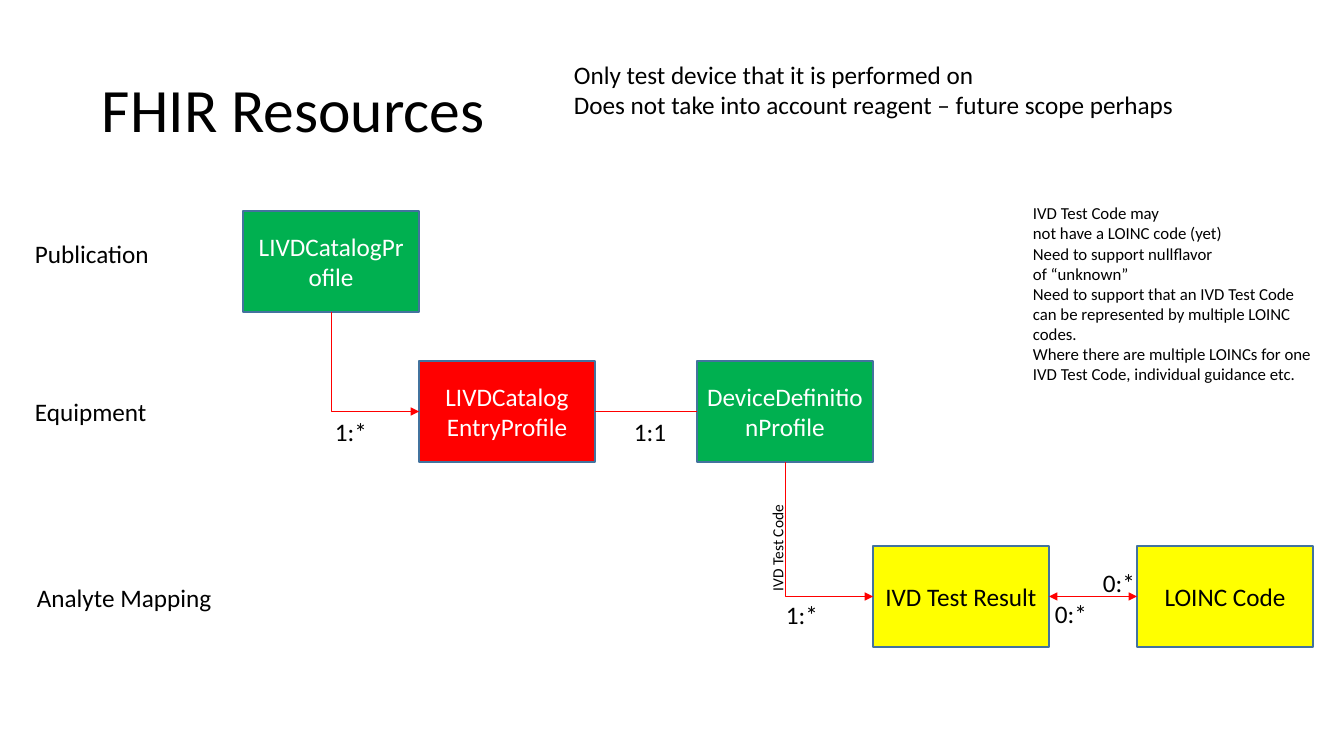
"""Build the FHIR Resources slide: resource boxes, their relations and notes."""
from lxml import etree
from pptx import Presentation
from pptx.dml.color import RGBColor
from pptx.enum.shapes import MSO_CONNECTOR, MSO_SHAPE
from pptx.enum.text import MSO_ANCHOR, MSO_AUTO_SIZE, PP_ALIGN
from pptx.oxml.ns import qn
from pptx.util import Emu, Pt

STRAIGHT, ELBOW = MSO_CONNECTOR.STRAIGHT, MSO_CONNECTOR.ELBOW
RECTANGLE = MSO_SHAPE.RECTANGLE
MIDDLE, CENTER = MSO_ANCHOR.MIDDLE, PP_ALIGN.CENTER
FIT, FIXED = MSO_AUTO_SIZE.SHAPE_TO_FIT_TEXT, MSO_AUTO_SIZE.NONE
TOP, LEFT, BOTTOM, RIGHT = range(4)
BOX_WIDTH, BOX_HEIGHT = 176, 101
COLORS = {
    "green": "00B050", "red": "FF0000", "yellow": "FFFF00",
    "outline": "43739E", "white": "FFFFFF", "black": "000000",
}


def px(*lengths):
    return [Emu(round(length * 914400 / 100.8)) for length in lengths]


def write(shape, text, size, color="black"):
    shape.text_frame.text = text
    for paragraph in shape.text_frame.paragraphs:
        paragraph.font.name = "Calibri"
        paragraph.font.size = Pt(size)
        paragraph.font.color.rgb = RGBColor.from_string(COLORS[color])


presentation = Presentation()
presentation.slide_width, presentation.slide_height = px(1344, 756)
slide = presentation.slides.add_slide(presentation.slide_layouts[6])

title = slide.shapes.add_textbox(*px(92, 40, 1159, 146))
title.text_frame.word_wrap = True
title.text_frame.auto_size = FIXED
title.text_frame.vertical_anchor = MIDDLE
write(title, "FHIR Resources", 44)
title.text_frame.paragraphs[0].line_spacing = 0.9

resources = [
    ("catalog", "LIVDCatalogProfile", 243, 211, "green", "white"),
    ("entry", "LIVDCatalog\vEntryProfile", 419, 361, "red", "white"),
    ("device", "DeviceDefinitionProfile", 697, 361, "green", "white"),
    ("result", "IVD Test Result", 873, 546, "yellow", "black"),
    ("loinc", "LOINC Code", 1137, 546, "yellow", "black"),
]
boxes = {}
for key, text, left, top, fill, color in resources:
    box = slide.shapes.add_shape(RECTANGLE, *px(left, top, BOX_WIDTH, BOX_HEIGHT))
    box.shadow.inherit = False
    box.fill.solid()
    box.fill.fore_color.rgb = RGBColor.from_string(COLORS[fill])
    box.line.color.rgb = RGBColor.from_string(COLORS["outline"])
    box.line.width = Pt(1)
    box.text_frame.vertical_anchor = MIDDLE
    write(box, text, 18, color)
    box.text_frame.paragraphs[0].alignment = CENTER
    boxes[key] = box

relations = [
    ("catalog", BOTTOM, "entry", ELBOW, ["tailEnd"]),
    ("entry", RIGHT, "device", STRAIGHT, []),
    ("device", BOTTOM, "result", ELBOW, ["tailEnd"]),
    ("result", RIGHT, "loinc", STRAIGHT, ["headEnd", "tailEnd"]),
]
for start, side, end, kind, arrowheads in relations:
    connector = slide.shapes.add_connector(kind, 0, 0, 0, 0)
    connector.begin_connect(boxes[start], side)
    connector.end_connect(boxes[end], LEFT)
    connector.line.color.rgb = RGBColor.from_string(COLORS["red"])
    connector.line.width = Pt(0.5)
    properties = connector._element.spPr
    if kind == ELBOW:
        across, down = connector.width, connector.height
        connector.left += (across - down) // 2
        connector.top += (down - across) // 2
        connector.width, connector.height = down, across
        transform = properties.find(qn("a:xfrm"))
        transform.set("rot", "16200000")
        transform.set("flipH", "1")
        properties.find(qn("a:prstGeom")).set("prst", "bentConnector2")
    for arrowhead in arrowheads:
        etree.SubElement(properties.find(qn("a:ln")), qn("a:" + arrowhead), type="triangle")
    etree.SubElement(properties, qn("a:effectLst"))

exception_note = "\n".join([
    "IVD Test Code may",
    "not have a LOINC code (yet)",
    "Need to support nullflavor",
    "of “unknown”",
    "Need to support that an IVD Test Code\vcan be represented by multiple LOINC\vcodes.",
    "Where there are multiple LOINCs for one\vIVD Test Code, individual guidance etc.",
])
scope_note = (
    "Only test device that it is performed on\n"
    "Does not take into account reagent – future scope perhaps"
)
labels = [
    ("1:*", 325, 411, 52, 40, 18, 0),
    ("1:*", 776, 594, 52, 40, 18, 0),
    ("0:*", 1093, 562, 52, 40, 18, 0),
    ("0:*", 1045, 593, 52, 40, 18, 0),
    ("1:1", 624, 411, 53, 40, 18, 0),
    ("Publication", 25, 233, 136, 40, 18, 0),
    ("Equipment", 25, 391, 133, 40, 18, 0),
    ("Analyte Mapping", 27, 577, 197, 40, 18, 0),
    (exception_note, 1023, 198, 301, 214, 12, 0),
    ("IVD Test Code", 723, 532, 109, 29, 11, 270),
    (scope_note, 564, 54, 627, 72, 18, 0),
]
for text, left, top, width, height, size, rotation in labels:
    label = slide.shapes.add_textbox(*px(left, top, width, height))
    label.rotation = rotation
    label.text_frame.word_wrap = False
    label.text_frame.auto_size = FIT
    write(label, text, size)

presentation.save("out.pptx")
